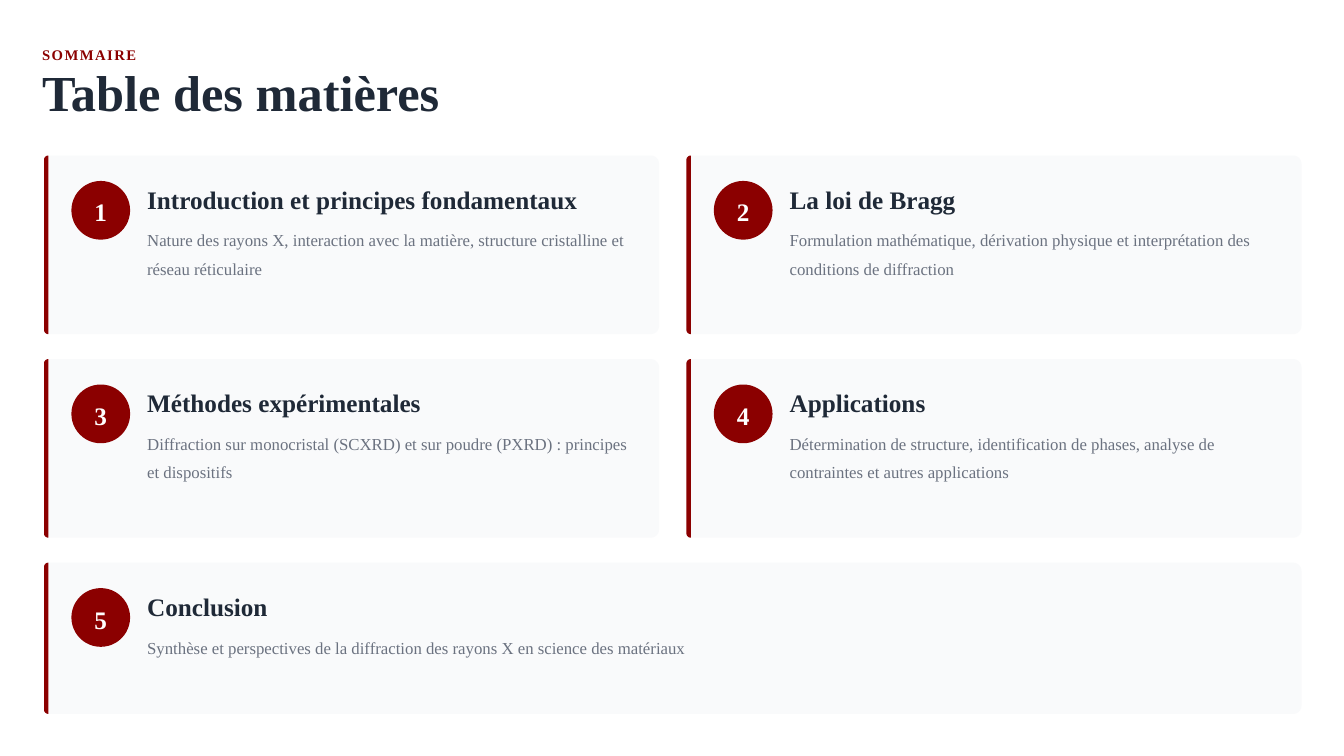
"""Build the numbered table-of-contents slide on X-ray diffraction."""
import math

import pptx
import pptx.dml.color
import pptx.enum.shapes
import pptx.enum.text
import pptx.util

Cm = pptx.util.Cm
Pt = pptx.util.Pt
RGBColor = pptx.dml.color.RGBColor
ALIGN = pptx.enum.text.PP_ALIGN
MIDDLE = pptx.enum.text.MSO_ANCHOR.MIDDLE

CRIMSON = RGBColor(0x8B, 0x00, 0x00)
INK = RGBColor(0x1F, 0x29, 0x37)
SLATE = RGBColor(0x6B, 0x72, 0x80)
MIST = RGBColor(0xF9, 0xFA, 0xFB)
WHITE = RGBColor(0xFF, 0xFF, 0xFF)

FACE = "Times New Roman"
KICKER = {"name": FACE, "size": Pt(10.5), "bold": True}
TITLE = {"name": FACE, "size": Pt(36), "bold": True}
HEADING = {"name": FACE, "size": Pt(18), "bold": True}
BODY = {"name": FACE, "size": Pt(12), "bold": False}
FRAME = {"margin_left": 0, "margin_top": 0, "margin_right": 0,
         "margin_bottom": 0, "vertical_anchor": MIDDLE, "word_wrap": True}

GRID_LEFT, GRID_TOP = 1.11, 3.92
COLUMN_STEP, ROW_STEP = 16.19, 5.13
CARD_WIDTH, CARD_HEIGHT, LAST_HEIGHT = 15.5, 4.5, 3.81
ACCENT_WIDTH, ACCENT_RADIUS, PANEL_RADIUS = 0.11, 0.11, 0.21
BADGE_SIZE, LINE_HEIGHT = 1.48, 0.69

CHAPTERS = [
    ("Introduction et principes fondamentaux",
     "Nature des rayons X, interaction avec la matière, "
     "structure cristalline et réseau réticulaire"),
    ("La loi de Bragg",
     "Formulation mathématique, dérivation physique et "
     "interprétation des conditions de diffraction"),
    ("Méthodes expérimentales",
     "Diffraction sur monocristal (SCXRD) et sur poudre (PXRD) : "
     "principes et dispositifs"),
    ("Applications",
     "Détermination de structure, identification de phases, "
     "analyse de contraintes et autres applications"),
    ("Conclusion",
     "Synthèse et perspectives de la diffraction des rayons X "
     "en science des matériaux"),
]


def apply_format(target, values):
    """Set every attribute in values on target."""
    for attribute, value in values.items():
        setattr(target, attribute, value)


def write(shape, wording, style, color, spacing, align=ALIGN.LEFT):
    """Fill a shape with one formatted paragraph and return its run."""
    apply_format(shape.text_frame, FRAME)
    paragraph = shape.text_frame.paragraphs[0]
    apply_format(paragraph, {"line_spacing": spacing, "alignment": align})
    run = paragraph.add_run()
    run.text = wording
    apply_format(run.font, style)
    run.font.color.rgb = color
    return run


def add_label(slide, box, wording, style, color, spacing):
    """Add a text box, with box given in centimetres."""
    label = slide.shapes.add_textbox(*map(Cm, box))
    return write(label, wording, style, color, spacing)


def paint(shape, color):
    """Give a shape a flat fill without line or shadow."""
    shape.shadow.inherit = False
    shape.fill.solid()
    shape.fill.fore_color.rgb = color
    shape.line.fill.background()


def add_panel(slide, box, left_radius, right_radius, color):
    """Draw a rectangle whose left and right corners round separately."""
    left, top, width, height = box
    right, bottom = left + width, top + height
    corners = [
        (right - right_radius, top + right_radius, right_radius, -90),
        (right - right_radius, bottom - right_radius, right_radius, 0),
        (left + left_radius, bottom - left_radius, left_radius, 90),
        (left + left_radius, top + left_radius, left_radius, 180),
    ]
    outline = []
    for x, y, radius, start in corners:
        for degrees in range(start, start + 91, 10):
            angle = math.radians(degrees)
            outline.append((Cm(x + radius * math.cos(angle)),
                            Cm(y + radius * math.sin(angle))))
    builder = slide.shapes.build_freeform(*outline[0])
    builder.add_line_segments(outline[1:], close=True)
    paint(builder.convert_to_shape(), color)


def add_badge(slide, left, top, number):
    """Draw the round chapter number."""
    badge = slide.shapes.add_shape(
        pptx.enum.shapes.MSO_SHAPE.OVAL,
        Cm(left), Cm(top), Cm(BADGE_SIZE), Cm(BADGE_SIZE))
    paint(badge, CRIMSON)
    write(badge, str(number), HEADING, WHITE, 1.1, ALIGN.CENTER)


def add_card(slide, index, heading, summary):
    """Place one chapter card on the grid, the last one spanning a row."""
    row, column = divmod(index, 2)
    left = GRID_LEFT + column * COLUMN_STEP
    top = GRID_TOP + row * ROW_STEP
    width, height, text_width, lines = CARD_WIDTH, CARD_HEIGHT, 12.5, 2
    if index == len(CHAPTERS) - 1:
        width, height = COLUMN_STEP + CARD_WIDTH, LAST_HEIGHT
        text_width, lines = 14.53, 1
    add_panel(slide, (left, top, width, height),
              ACCENT_RADIUS, PANEL_RADIUS, MIST)
    add_panel(slide, (left, top, ACCENT_WIDTH, height),
              ACCENT_RADIUS, 0, CRIMSON)
    add_badge(slide, left + 0.69, top + 0.64, index + 1)
    text_left = left + 2.6
    add_label(slide, (text_left, top + 0.64, text_width + 0.1, 0.85),
              heading, HEADING, INK, 1.1)
    add_label(slide, (text_left, top + 1.7, text_width, lines * LINE_HEIGHT),
              summary, BODY, SLATE, 1.4)


def main():
    """Assemble and save the slide."""
    deck = pptx.Presentation()
    apply_format(deck, {"slide_width": Cm(33.87), "slide_height": Cm(19.05)})
    slide = deck.slides.add_slide(deck.slide_layouts[6])
    kicker = add_label(slide, (1.06, 1.06, 31.93, 0.53),
                       "SOMMAIRE", KICKER, CRIMSON, 1.2)
    kicker.font._element.set("spc", "110")
    add_label(slide, (1.06, 1.8, 32.39, 1.27),
              "Table des matières", TITLE, INK, 0.8)
    for index, (heading, summary) in enumerate(CHAPTERS):
        add_card(slide, index, heading, summary)
    deck.save("out.pptx")


if __name__ == "__main__":
    main()
